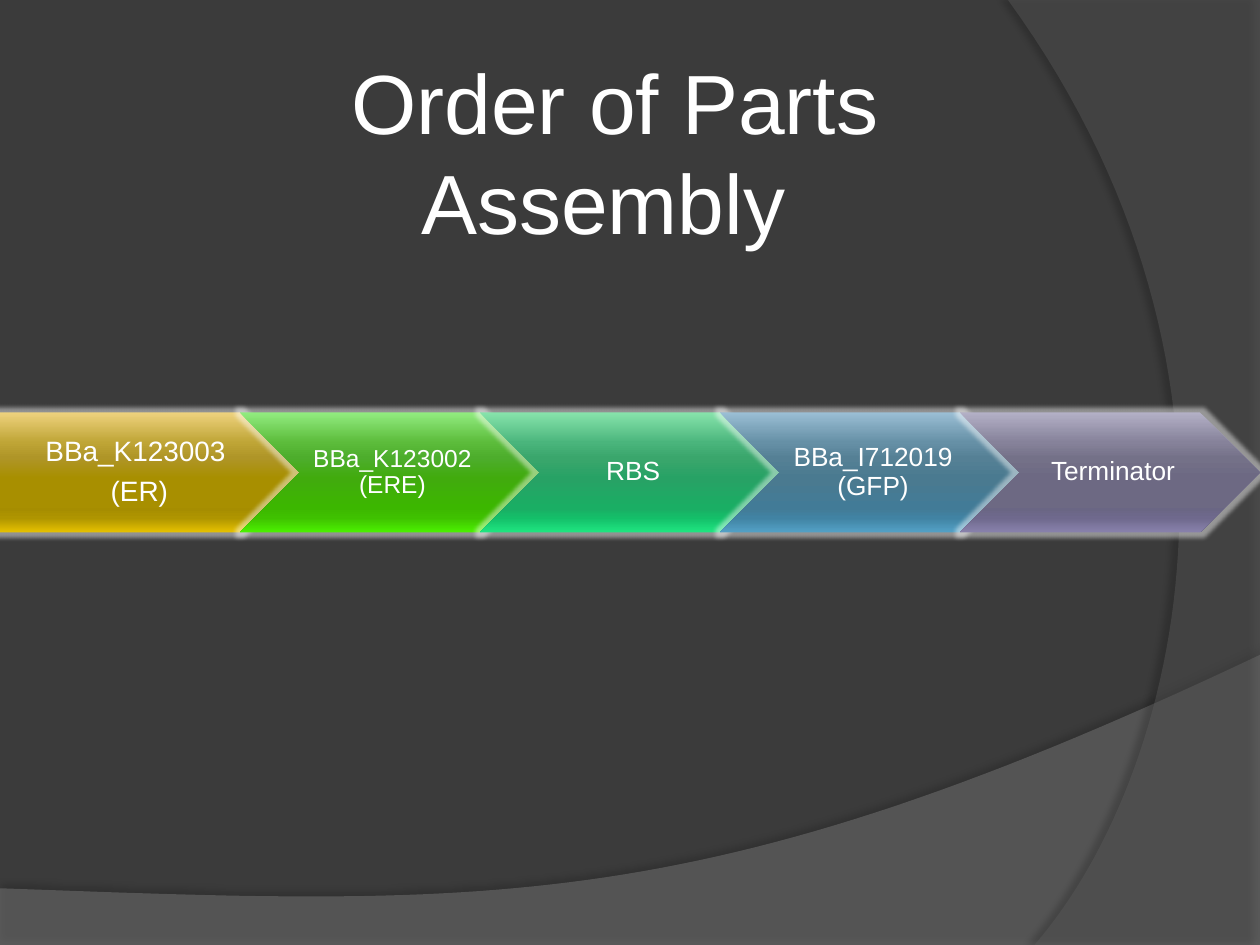
from dataclasses import dataclass

from lxml.etree import SubElement
from pptx import Presentation
from pptx.dml.color import RGBColor
from pptx.enum.shapes import MSO_SHAPE as Preset
from pptx.enum.text import MSO_ANCHOR as Anchor, PP_ALIGN as Align
from pptx.oxml.ns import qn
from pptx.util import Emu, Inches, Pt

WIDE, HIGH = Inches(10), Inches(7.5)
UNIT = WIDE / 21  # five arrows of 5 units, each overlapping the next by 1
STEP, SPAN, DEPTH = 4, 5, 2
STOPS = (0, 25, 38, 55, 80, 88, 100)


@dataclass(frozen=True)
class Theme:
    font: str = "Arial"
    back: str = "3B3B3B"
    text: str = "FFFFFF"
    glow: str = "FFFFFF"
    shade: str = "000000"
    title: int = 48


@dataclass(frozen=True)
class Curve:
    """Cubic curve, its four points in shares of the slide."""
    points: tuple

    def trace(self, count: int = 60) -> list:
        a, b, c, d = self.points
        return [
            tuple(p * (1 - t) ** 3 + 3 * q * t * (1 - t) ** 2
                  + 3 * r * t ** 2 * (1 - t) + s * t ** 3
                  for p, q, r, s in zip(a, b, c, d))
            for t in (i / count for i in range(count + 1))]


@dataclass(frozen=True)
class Wave:
    curve: Curve
    corners: tuple
    color: str
    alpha: int
    shade: int
    shift: float
    angle: int


@dataclass(frozen=True)
class Part:
    lines: tuple
    size: int
    colors: tuple
    inset: float = 0.07


THEME = Theme()
WAVES = (
    Wave(Curve(((1, 0.693), (0.559, 0.972), (0.391, 0.959), (0, 0.94))),
         ((0, 1), (1, 1)), "7F7F7F", 45, 35, 3.5, 270),
    Wave(Curve(((0.821, 1), (0.935, 0.825), (1.018, 0.4), (0.8, 0))),
         ((1, 0), (1, 1)), "5E5E5E", 40, 45, 4, 180),
)
PARTS = (
    Part(("BBa_K123003 ", "(ER)"), 16,
         ("EED27E", "BFA536", "AF9527", "A88F00", "A68D00", "AF9500", "E6C100"), 0.09),
    Part(("BBa_K123002 (ERE)",), 14,
         ("92EC80", "5CBC3B", "4DAD2C", "41AB0D", "3CB700", "3FC100", "4BF200"), 0.06),
    Part(("RBS",), 15,
         ("88E4AC", "4AB57C", "3AA66C", "27A265", "1AAE64", "14BF69", "1FE681")),
    Part(("BBa_I712019 (GFP)",), 15,
         ("9ABED4", "6690A6", "558095", "4A7A90", "427B97", "4183A3", "53A1C6")),
    Part(("Terminator",), 15,
         ("B3B0C6", "86829A", "747188", "6D6983", "6A6684", "6F698D", "8982AC")),
)


def tint(parent, color: str, alpha: int = 100) -> None:
    """Add a colour with its opacity in percent."""
    node = SubElement(parent, qn("a:srgbClr"), val=color)
    if alpha < 100:
        SubElement(node, qn("a:alpha"), val=str(alpha * 1000))


def effect(shape, tag: str, color: str, alpha: int, **props: int) -> None:
    shape.shadow.inherit = False
    group = shape._element.spPr.find(qn("a:effectLst"))
    node = SubElement(group, qn(tag), {k: str(v) for k, v in props.items()})
    tint(node, color, alpha)


def grade(shape, colors: tuple) -> None:
    """Fill from top to bottom with one colour per stop."""
    shape.fill.gradient()
    shape.fill.gradient_angle = 270
    stops = shape._element.spPr.find(qn("a:gradFill")).find(qn("a:gsLst"))
    for old in list(stops):
        stops.remove(old)
    for place, color in zip(STOPS, colors):
        tint(SubElement(stops, qn("a:gs"), pos=str(place * 1000)), color)


def write(para, text: str, size: int) -> None:
    para.text = text
    para.alignment = Align.CENTER
    para.font.name = THEME.font
    para.font.size = Pt(size)
    para.font.color.rgb = RGBColor.from_string(THEME.text)


def draw_wave(shapes, wave: Wave) -> None:
    dots = [(round(x * WIDE), round(y * HIGH))
            for x, y in (*wave.curve.trace(), *wave.corners)]
    pen = shapes.build_freeform(*dots[0])
    pen.add_line_segments(dots[1:])
    shape = pen.convert_to_shape()
    shape.fill.solid()
    shape.fill.fore_color.rgb = RGBColor.from_string(wave.color)
    tone = shape._element.spPr.find(qn("a:solidFill"))[0]
    SubElement(tone, qn("a:alpha"), val=str(wave.alpha * 1000))
    shape.line.fill.background()
    effect(shape, "a:outerShdw", THEME.shade, wave.shade, blurRad=Pt(4),
           dist=Pt(wave.shift), dir=wave.angle * 60000)


def draw_part(shapes, part: Part, col: int) -> None:
    kind = Preset.CHEVRON if col else Preset.PENTAGON
    shape = shapes.add_shape(
        kind, Emu(round(col * STEP * UNIT)), Emu(round((HIGH - DEPTH * UNIT) / 2)),
        Emu(round(SPAN * UNIT)), Emu(round(DEPTH * UNIT)))
    grade(shape, part.colors)
    shape.line.fill.background()
    effect(shape, "a:glow", THEME.glow, 45, rad=Pt(5))
    frame = shape.text_frame
    frame.word_wrap = True
    frame.vertical_anchor = Anchor.MIDDLE
    frame.margin_left, frame.margin_right = Inches(part.inset), Inches(0.02)
    frame.margin_top = frame.margin_bottom = Inches(0.04)
    for row, text in enumerate(part.lines):
        para = frame.add_paragraph() if row else frame.paragraphs[0]
        write(para, text, part.size)
        para.line_spacing = 0.9
        para.space_after = Pt(round(part.size * 0.35))


def draw_title(shapes, text: str) -> None:
    box = shapes.add_textbox(Inches(1.42), Inches(0.33), Inches(6.92), Inches(1.72))
    frame = box.text_frame
    frame.word_wrap = True
    frame.margin_top = Inches(0.08)
    write(frame.paragraphs[0], text, THEME.title)
    frame.paragraphs[0].line_spacing = Pt(57)


def main() -> None:
    deck = Presentation()
    deck.slide_width, deck.slide_height = WIDE, HIGH
    slide = deck.slides.add_slide(deck.slide_layouts[6])
    slide.background.fill.solid()
    slide.background.fill.fore_color.rgb = RGBColor.from_string(THEME.back)
    for wave in WAVES:
        draw_wave(slide.shapes, wave)
    for col, part in enumerate(PARTS):
        draw_part(slide.shapes, part, col)
    draw_title(slide.shapes, "Order of Parts Assembly ")
    deck.save("out.pptx")


if __name__ == "__main__":
    main()
